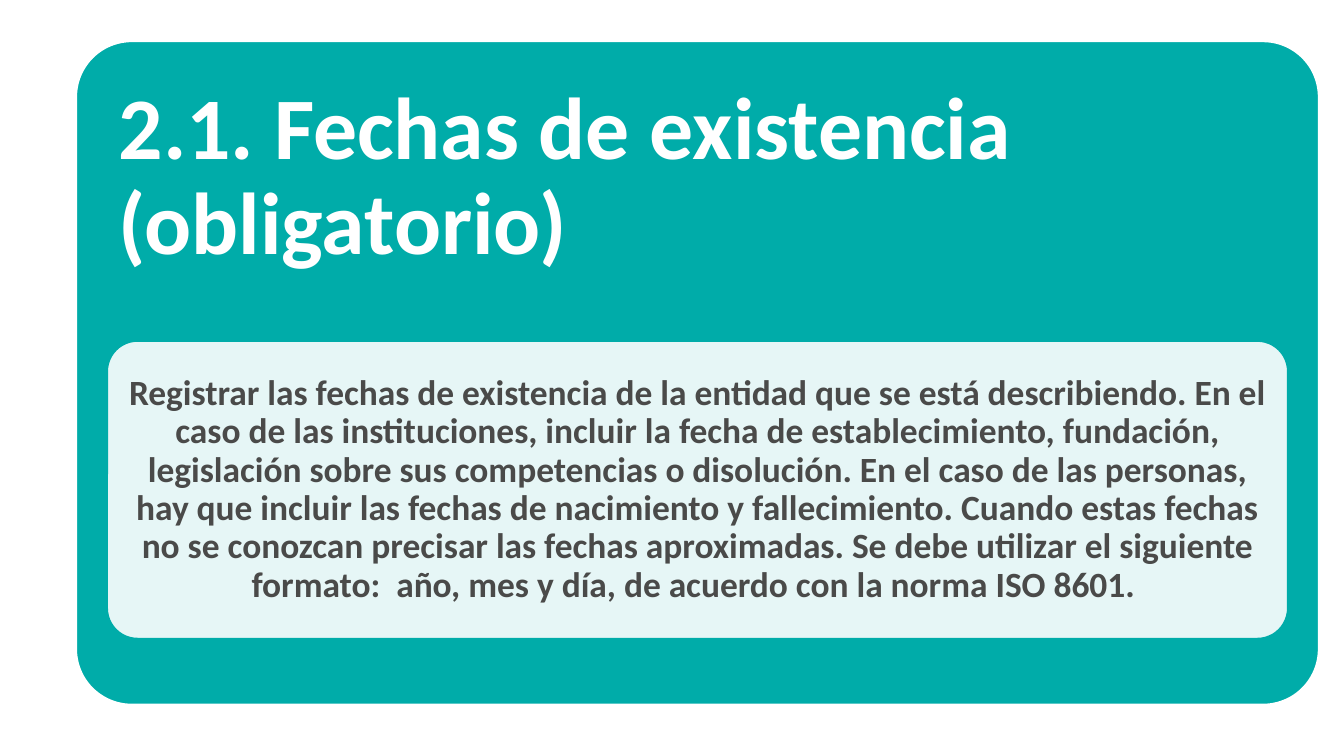
from dataclasses import dataclass

from lxml.etree import SubElement
from pptx import Presentation
from pptx.dml.color import RGBColor
from pptx.enum.shapes import MSO_SHAPE
from pptx.enum.text import MSO_ANCHOR, PP_ALIGN
from pptx.oxml.ns import qn
from pptx.util import Inches, Pt


@dataclass(frozen=True)
class Theme:
    teal: RGBColor = RGBColor(0x00, 0xAC, 0xA9)
    white: RGBColor = RGBColor(0xFF, 0xFF, 0xFF)
    gray: RGBColor = RGBColor(0x4A, 0x4A, 0x49)
    font: str = "Calibri"
    title_size: int = 47
    body_size: int = 19
    outline: int = 2


THEME = Theme()
TITLE = "2.1. Fechas de existencia (obligatorio)"
BODY = (
    "Registrar las fechas de existencia de la entidad que se está describiendo. "
    "En el caso de las instituciones, incluir la fecha de establecimiento, fundación, "
    "legislación sobre sus competencias o disolución. En el caso de las personas, "
    "hay que incluir las fechas de nacimiento y fallecimiento. Cuando estas fechas "
    "no se conozcan precisar las fechas aproximadas. Se debe utilizar el siguiente "
    "formato:  año, mes y día, de acuerdo con la norma ISO 8601. "
)


def add_panel(page, left, top, width, height, *, corner, fill, line, opacity=100):
    panel = page.shapes.add_shape(
        MSO_SHAPE.ROUNDED_RECTANGLE,
        Inches(left), Inches(top), Inches(width), Inches(height),
    )
    panel.adjustments[0] = corner
    panel.shadow.inherit = False
    panel.fill.solid()
    panel.fill.fore_color.rgb = fill
    panel.line.color.rgb = line
    panel.line.width = Pt(THEME.outline)
    if opacity < 100:
        color = panel.fill._xPr.find(qn("a:solidFill"))[0]
        SubElement(color, qn("a:alpha"), val=str(opacity * 1000))
    return panel


def write_text(box, text, *, size, color, align, anchor, inset, bottom_inset):
    frame = box.text_frame
    frame.word_wrap = True
    frame.vertical_anchor = anchor
    frame.margin_left = frame.margin_right = frame.margin_top = Inches(inset)
    frame.margin_bottom = Inches(bottom_inset)
    para = frame.paragraphs[0]
    para.alignment = align
    para.line_spacing = 0.9
    span = para.add_run()
    span.text = text
    span.font.name = THEME.font
    span.font.size = Pt(size)
    span.font.bold = True
    span.font.color.rgb = color


def add_description(page, left, top, width, height):
    panel = add_panel(page, left, top, width, height, corner=0.105,
                      fill=THEME.white, line=THEME.teal, opacity=90)
    write_text(panel, BODY, size=THEME.body_size, color=THEME.gray,
               align=PP_ALIGN.CENTER, anchor=MSO_ANCHOR.MIDDLE,
               inset=0.08, bottom_inset=0.08)


def add_section_card(page, left, top, width, height):
    card = add_panel(page, left, top, width, height, corner=0.085,
                     fill=THEME.teal, line=THEME.white)
    write_text(card, TITLE, size=THEME.title_size, color=THEME.white,
               align=PP_ALIGN.LEFT, anchor=MSO_ANCHOR.TOP,
               inset=0.2, bottom_inset=3.05)
    side = 0.23
    add_description(page, left + side, top + 2.23, width - 2 * side, 2.23)


def main():
    deck = Presentation()
    deck.slide_width = Inches(10)
    deck.slide_height = Inches(10 * 9 / 16)
    page = deck.slides.add_slide(deck.slide_layouts[6])
    add_section_card(page, 0.56, 0.3, 9.26, 4.95)
    deck.save("out.pptx")


if __name__ == "__main__":
    main()
